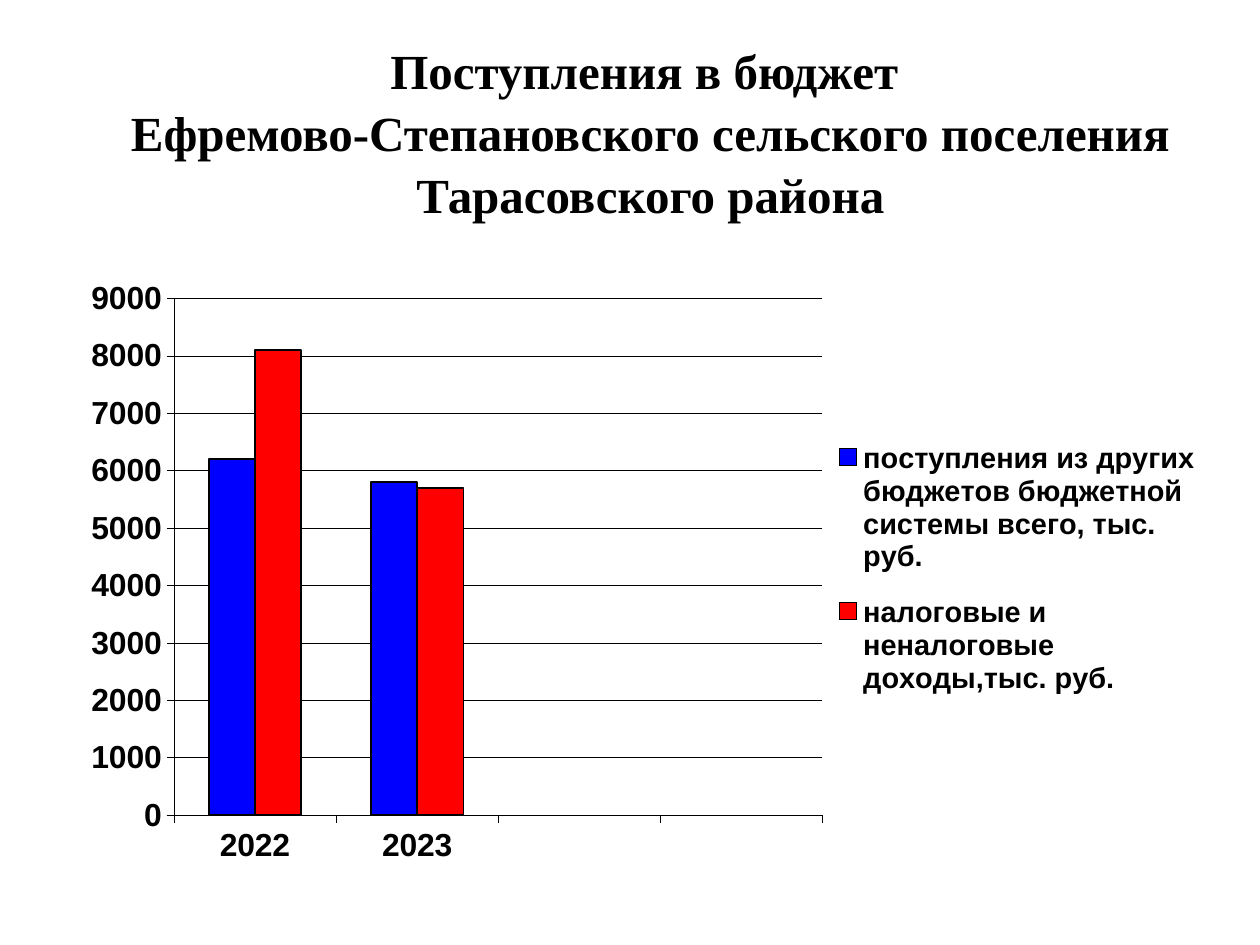
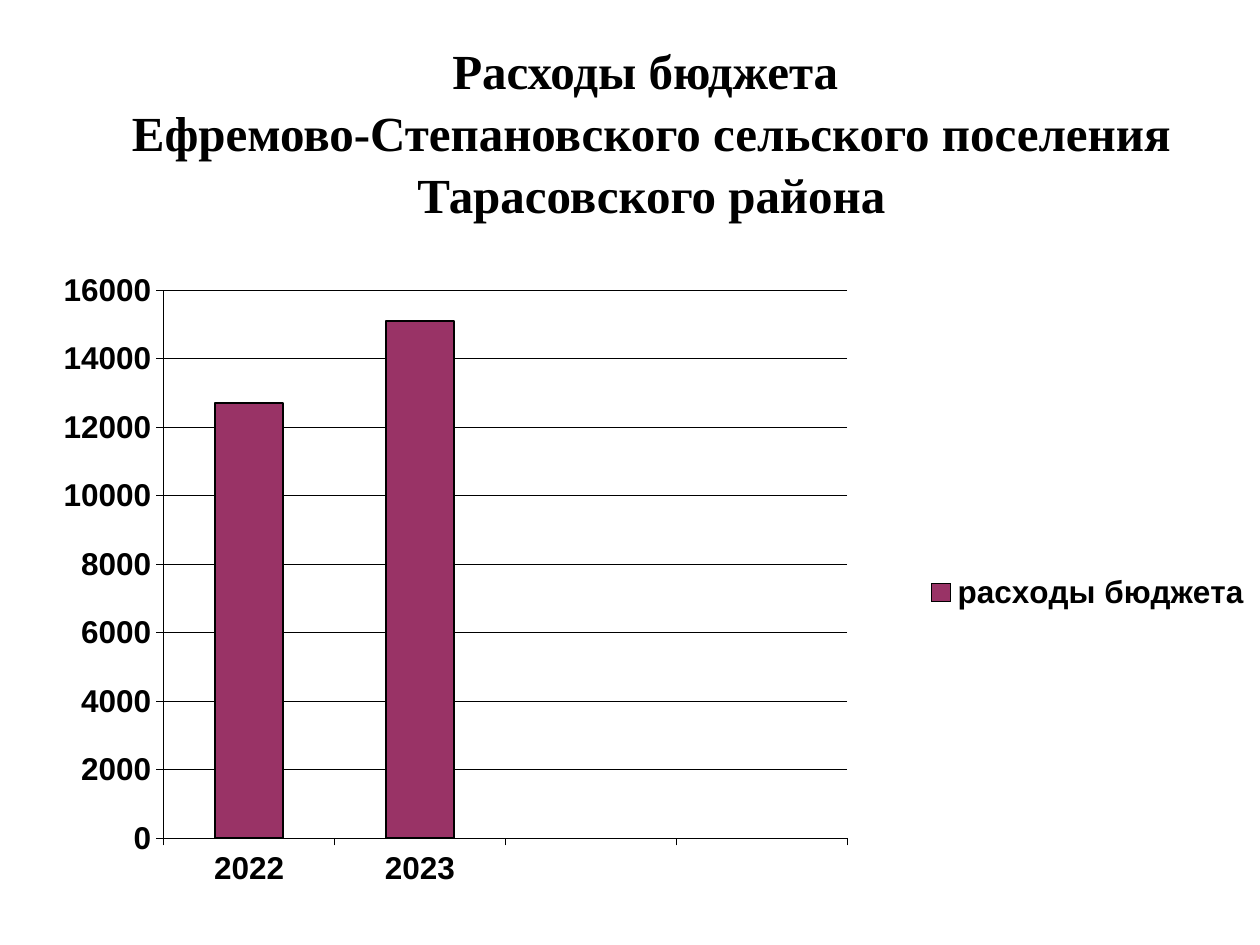
"""Build two slides with column charts of a rural settlement's budget."""
import lxml.etree
import pptx
import pptx.chart.data
import pptx.dml.color
import pptx.enum.chart
import pptx.enum.text
import pptx.oxml.ns
import pptx.util

Cm, Pt, RGBColor = pptx.util.Cm, pptx.util.Pt, pptx.dml.color.RGBColor
qn = pptx.oxml.ns.qn

BLACK = RGBColor(0x00, 0x00, 0x00)
BLUE = RGBColor(0x00, 0x00, 0xFF)
RED = RGBColor(0xFF, 0x00, 0x00)
PLUM = RGBColor(0x99, 0x33, 0x66)

SETTLEMENT = ["Ефремово-Степановского сельского поселения", "Тарасовского района"]
YEARS = ["2022", "2023", "", ""]
SLIDES = [
    {
        "title": "Поступления в бюджет ",
        "title_box": (1.68, 0.64, 22.86, 4.6),
        "chart_box": (1.5, 5.44, 22.81, 12.55),
        "plot": (0.088, 0.046, 0.573, 0.83),
        "legend": (0.67, 0.24, 0.33, 0.48),
        "sizes": (18.2, 16.5),
        "scale": (9000, 1000),
        "series": [
            ("поступления из других бюджетов бюджетной системы всего, тыс. руб.",
             [6200, 5800, None, None], BLUE),
            ("налоговые и неналоговые доходы,тыс. руб.",
             [8100, 5700, None, None], RED),
        ],
    },
    {
        "title": "Расходы бюджета ",
        "title_box": (1.7, 0.64, 22.86, 4.85),
        "chart_box": (1.14, 5.33, 24.26, 13.23),
        "plot": (0.089, 0.039, 0.568, 0.835),
        "legend": (0.717, 0.47, 0.28, 0.06),
        "sizes": (18, 18),
        "scale": (16000, 2000),
        "series": [("расходы бюджета", [12700, 15100, None, None], PLUM)],
    },
]


def style_font(font, name, size):
    font.name, font.size, font.bold = name, Pt(size), True
    font.color.rgb = BLACK


def style_line(line, width):
    line.color.rgb = BLACK
    line.width = Pt(width)


def add_title(s, first_line, box):
    sp = s.shapes.title
    sp.left, sp.top, sp.width, sp.height = map(Cm, box)
    tf = sp.text_frame
    tf.word_wrap = True
    tf.auto_size = pptx.enum.text.MSO_AUTO_SIZE.NONE
    tf.vertical_anchor = pptx.enum.text.MSO_ANCHOR.TOP
    for i, text in enumerate([first_line] + SETTLEMENT):
        p = tf.add_paragraph() if i else tf.paragraphs[0]
        p.alignment = pptx.enum.text.PP_ALIGN.CENTER
        p.line_spacing = 1.05
        r = p.add_run()
        r.text = text
        style_font(r.font, "Times New Roman", 28)


def set_layout(element, index, box, inner=False):
    for old in element.findall(qn("c:layout")):
        element.remove(old)
    layout = lxml.etree.Element(qn("c:layout"))
    manual = lxml.etree.SubElement(layout, qn("c:manualLayout"))
    settings = [("layoutTarget", "inner")] if inner else []
    settings += [("xMode", "edge"), ("yMode", "edge")] + list(zip("xywh", box))
    for tag, value in settings:
        lxml.etree.SubElement(manual, qn("c:" + tag)).set("val", str(value))
    element.insert(index, layout)


def add_budget_chart(s, content):
    data = pptx.chart.data.CategoryChartData()
    data.categories = YEARS
    for name, values, _ in content["series"]:
        data.add_series(name, values)
    kind = pptx.enum.chart.XL_CHART_TYPE.COLUMN_CLUSTERED
    chart = s.shapes.add_chart(kind, *map(Cm, content["chart_box"]), data).chart
    size, legend_size = content["sizes"]
    style_font(chart.font, "Arial", size)
    chart.has_title = False

    plot = chart.plots[0]
    plot.gap_width, plot.overlap, plot.vary_by_categories = 150, 0, False
    for series, (_, _, color) in zip(plot.series, content["series"]):
        series.format.fill.solid()
        series.format.fill.fore_color.rgb = color
        style_line(series.format.line, 1)

    for axis in (chart.category_axis, chart.value_axis):
        axis.major_tick_mark = pptx.enum.chart.XL_TICK_MARK.OUTSIDE
        axis.minor_tick_mark = pptx.enum.chart.XL_TICK_MARK.NONE
        style_line(axis.format.line, 0.25)
        style_font(axis.tick_labels.font, "Arial", size)
    chart.category_axis.tick_label_position = pptx.enum.chart.XL_TICK_LABEL_POSITION.LOW
    axis = chart.value_axis
    axis.minimum_scale = 0
    axis.maximum_scale, axis.major_unit = content["scale"]
    axis.has_major_gridlines = True
    style_line(axis.major_gridlines.format.line, 0.25)

    chart.has_legend = True
    legend = chart.legend
    legend.position = pptx.enum.chart.XL_LEGEND_POSITION.RIGHT
    legend.include_in_layout = False
    style_font(legend.font, "Arial", legend_size)
    root = chart.element
    set_layout(root.find(".//" + qn("c:plotArea")), 0, content["plot"], inner=True)
    set_layout(root.find(".//" + qn("c:legend")), 1, content["legend"])


def main():
    prs = pptx.Presentation()
    prs.slide_width, prs.slide_height = Cm(25.4), Cm(19.05)
    for content in SLIDES:
        s = prs.slides.add_slide(prs.slide_layouts.get_by_name("Title Only"))
        add_title(s, content["title"], content["title_box"])
        add_budget_chart(s, content)
    prs.save("out.pptx")


if __name__ == "__main__":
    main()
